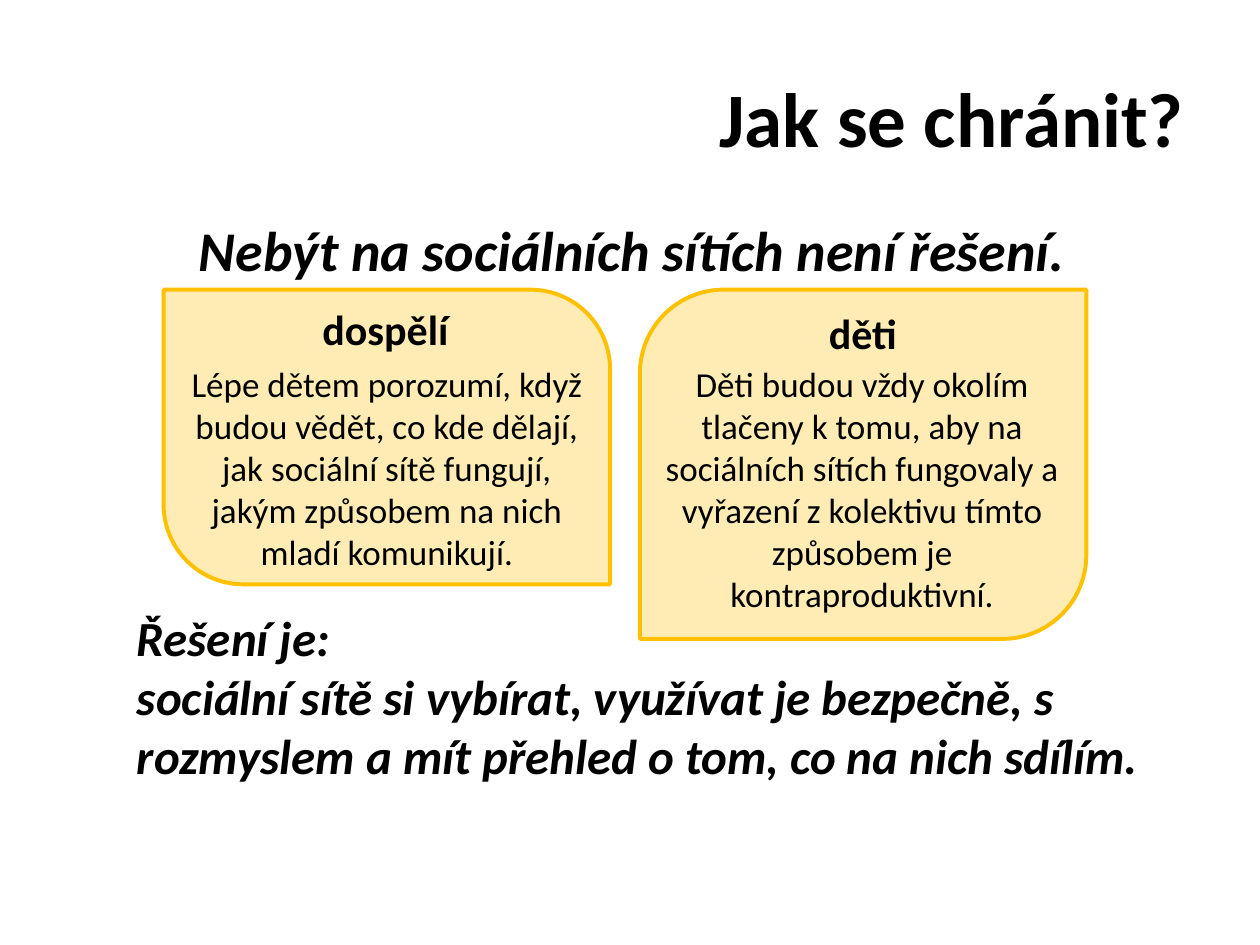
from lxml.etree import SubElement
from pptx import Presentation
from pptx.dml.color import RGBColor as Rgb
from pptx.enum.shapes import MSO_SHAPE as Kind
from pptx.enum.text import MSO_ANCHOR as Anchor, MSO_AUTO_SIZE as Auto, PP_ALIGN as Align
from pptx.oxml.ns import qn
from pptx.util import Cm, Pt

COLORS = {"text": "000000", "leaf": "FFC000"}


class Deck:
    """Holds the style and the current slide."""

    font = "Calibri"

    def __init__(self):
        self.prs = Presentation()
        self.prs.slide_width, self.prs.slide_height = Cm(25.4), Cm(19.05)
        self.slide = self.prs.slides.add_slide(self.prs.slide_layouts[1])

    def fill(self, frame, lines, size, align=Align.LEFT, bold=False, italic=False):
        for i, line in enumerate(lines):
            par = frame.paragraphs[0] if i == 0 else frame.add_paragraph()
            par.alignment = align
            run = par.add_run()
            run.text = line
            font = run.font
            font.name, font.size = self.font, Pt(size)
            font.bold, font.italic = bold, italic
            font.color.rgb = Rgb.from_string(COLORS["text"])

    def place(self, shape, box):
        shape.left, shape.top, shape.width, shape.height = map(Cm, box)

    def title(self, text, box):
        shape = self.slide.shapes.title
        self.place(shape, box)
        frame = shape.text_frame
        frame.auto_size, frame.vertical_anchor = Auto.NONE, Anchor.MIDDLE
        self.fill(frame, [text], 44, Align.RIGHT, bold=True)

    def body(self, text, box):
        shape = self.slide.placeholders[1]
        self.place(shape, box)
        frame = shape.text_frame
        frame.auto_size = Auto.NONE
        self.fill(frame, [text], 32, Align.CENTER, bold=True, italic=True)
        # No bullet, no hanging indent
        props = frame.paragraphs[0]._p.get_or_add_pPr()
        props.set("marL", "0")
        props.set("indent", "0")
        SubElement(props, qn("a:buNone"))

    def leaf(self, box, corners):
        shape = self.slide.shapes.add_shape(Kind.ROUND_2_DIAG_RECTANGLE, *map(Cm, box))
        shape.shadow.inherit = False
        for i, value in enumerate(corners):
            shape.adjustments[i] = value
        color = Rgb.from_string(COLORS["leaf"])
        shape.fill.solid()
        shape.fill.fore_color.rgb = color
        tone = shape._element.spPr.find(qn("a:solidFill"))[0]
        SubElement(tone, qn("a:alpha"), val="29000")
        shape.line.color.rgb = color
        shape.line.width = Pt(2.25)

    def text(self, lines, box, size, wrap=True, **style):
        frame = self.slide.shapes.add_textbox(*map(Cm, box)).text_frame
        frame.word_wrap = wrap
        frame.auto_size = Auto.SHAPE_TO_FIT_TEXT
        self.fill(frame, lines, size, **style)


def main():
    deck = Deck()

    # Title and claim
    deck.title("Jak se chránit?", (1.27, 0.76, 22.86, 3.18))
    deck.body("Nebýt na sociálních sítích není řešení.", (1.32, 4.22, 22.86, 1.8))

    # Leaves: adults on the left, children on the right
    top, wide = 5.84, 9
    deck.leaf((12.9, top, wide, 7.04), (0.24, 0))
    deck.leaf((3.3, top, wide, 5.94), (0, 0.27))

    # Leaf headings
    deck.text(["dospělí"], (6.25, 5.99, 3.07, 1.27), 24, wrap=False, bold=True)
    deck.text(["děti"], (16.46, 6.07, 1.9, 1.27), 24, wrap=False, bold=True)

    # Leaf texts
    deck.text(["Lépe dětem porozumí, když budou vědět, co kde dělají, jak sociální "
               "sítě fungují, jakým způsobem na nich mladí komunikují."],
              (3.5, 7.19, 8.6, 4.52), 20, align=Align.CENTER)
    deck.text(["Děti budou vždy okolím tlačeny k tomu, aby na sociálních sítích "
               "fungovaly a vyřazení z kolektivu tímto způsobem je kontraproduktivní."],
              (12.88, 7.19, wide, 5.38), 20, align=Align.CENTER)

    # Conclusion
    deck.text(["Řešení je:",
               "sociální sítě si vybírat, využívat je bezpečně, s rozmyslem "
               "a mít přehled o tom, co na nich sdílím."],
              (2.51, 12.12, 21.7, 3.84), 28, bold=True, italic=True)

    deck.prs.save("out.pptx")


if __name__ == "__main__":
    main()
